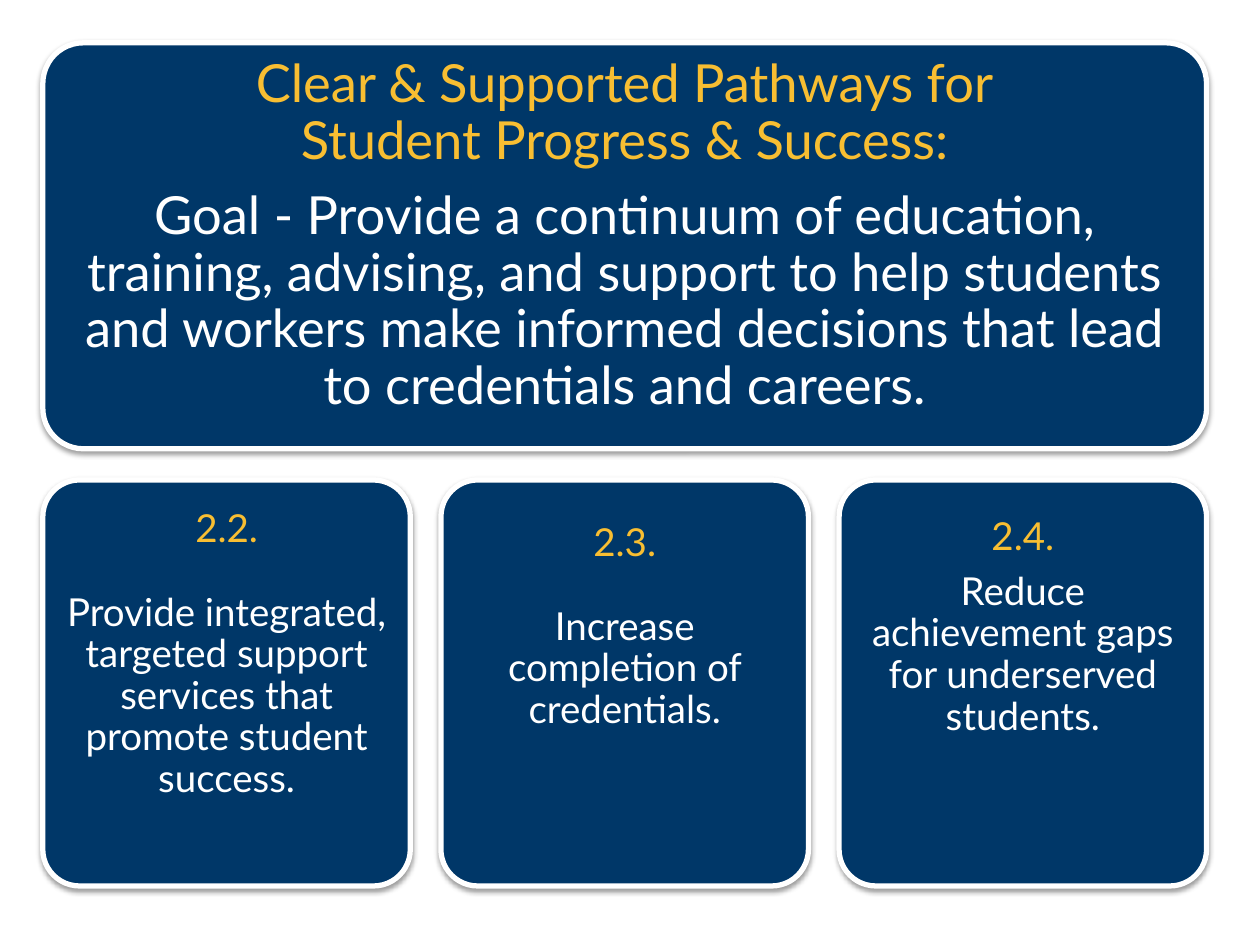
"""Build the pathways goal slide with a header panel above three objective cards."""
from lxml import etree
from pptx import Presentation
from pptx.dml.color import RGBColor
from pptx.enum import shapes, text
from pptx.oxml.ns import qn
from pptx.util import Pt

THEME = {
    "font": "Lato", "panel": "003768", "outline": "FFFFFF",
    "accent": "F8BE32", "body": "FFFFFF", "header_size": 30, "card_size": 22,
}
HEADER = (
    "Clear & Supported Pathways for\vStudent Progress & Success:",
    "Goal - Provide a continuum of education, training, advising, and support to help "
    "students and workers make informed decisions that lead to credentials and careers.",
)
CARDS = [
    {"number": "2.2.", "top_inset": 10.9, "gap": 23.8,
     "goal": "Provide integrated, targeted support services that promote student success."},
    {"number": "2.3.", "top_inset": 18.9, "gap": 23.8,
     "goal": "Increase completion of credentials."},
    {"number": "2.4.", "top_inset": 15.1, "gap": 7.7,
     "goal": "Reduce achievement gaps for underserved students."},
]
LEFT, TOP, WIDTH, HEIGHT = 24.5, 24.5, 665, 232
COLUMN_GAP, ROW_GAP = 17.5, 17.8
HEADER_PADDING, CARD_PADDING = 6.75, 6.1


def add_panel(slide, left, top, width, height):
    """Add a rounded panel with a white outline and a soft shadow."""
    panel = slide.shapes.add_shape(
        shapes.MSO_SHAPE.ROUNDED_RECTANGLE, Pt(left), Pt(top), Pt(width), Pt(height))
    panel.adjustments[0] = 0.1
    panel.fill.solid()
    panel.fill.fore_color.rgb = RGBColor.from_string(THEME["panel"])
    panel.line.color.rgb = RGBColor.from_string(THEME["outline"])
    panel.line.width = Pt(3)
    panel.shadow.inherit = False
    effects = panel._element.spPr.find(qn("a:effectLst"))
    shadow = etree.SubElement(effects, qn("a:outerShdw"), blurRad=str(Pt(3.1)),
                              dist=str(Pt(1.6)), dir="5400000", rotWithShape="0")
    color = etree.SubElement(shadow, qn("a:srgbClr"), val="000000")
    etree.SubElement(color, qn("a:alpha"), val="38000")


def place_text(shape, left, top, width, height, padding):
    """Position a text shape inside its panel and set its margins."""
    shape.left, shape.top = Pt(left + padding), Pt(top + padding)
    shape.width, shape.height = Pt(width - 2 * padding), Pt(height - 2 * padding)
    frame = shape.text_frame
    frame.word_wrap = True
    frame.auto_size = text.MSO_AUTO_SIZE.NONE
    frame.margin_left = frame.margin_right = Pt(padding)
    return frame


def write(paragraph, words, *, size, color, space_after):
    """Write centred text into a paragraph with the given format."""
    paragraph.text = words
    paragraph.alignment = text.PP_ALIGN.CENTER
    paragraph.line_spacing = 0.9
    paragraph.space_before = Pt(0)
    paragraph.space_after = Pt(space_after)
    for line_break in paragraph._p.findall(qn("a:br")):
        etree.SubElement(line_break, qn("a:rPr"), sz=str(size * 100))
    for run in paragraph.runs:
        run.font.name = THEME["font"]
        run.font.size = Pt(size)
        run.font.color.rgb = RGBColor.from_string(color)


def write_pair(frame, heading, body, *, size, gap):
    """Write an accent heading followed by its body text."""
    write(frame.paragraphs[0], heading, size=size, color=THEME["accent"], space_after=gap)
    write(frame.add_paragraph(), body, size=size, color=THEME["body"], space_after=0)


def add_header(slide):
    """Add the header panel with the slide title on it."""
    box = (LEFT, TOP, WIDTH, HEIGHT)
    add_panel(slide, *box)
    title = slide.shapes.title
    slide.shapes._spTree.append(title._element)
    frame = place_text(title, *box, HEADER_PADDING)
    frame.vertical_anchor = text.MSO_ANCHOR.MIDDLE
    frame.margin_top = Pt(0)
    frame.margin_bottom = Pt(10.5)
    write_pair(frame, *HEADER, size=THEME["header_size"], gap=10.5)


def add_cards(slide):
    """Add the row of equal cards below the header."""
    width = (WIDTH - COLUMN_GAP * (len(CARDS) - 1)) / len(CARDS)
    top = TOP + HEIGHT + ROW_GAP
    for column, card in enumerate(CARDS):
        box = (LEFT + column * (width + COLUMN_GAP), top, width, HEIGHT)
        add_panel(slide, *box)
        label = slide.shapes.add_textbox(0, 0, 0, 0)
        frame = place_text(label, *box, CARD_PADDING)
        frame.vertical_anchor = text.MSO_ANCHOR.TOP
        frame.margin_top = Pt(card["top_inset"])
        write_pair(frame, card["number"], card["goal"],
                   size=THEME["card_size"], gap=card["gap"])


def main():
    """Create and save the presentation."""
    presentation = Presentation()
    presentation.slide_width, presentation.slide_height = Pt(720), Pt(540)
    slide = presentation.slides.add_slide(presentation.slide_layouts[5])
    add_header(slide)
    add_cards(slide)
    presentation.save("out.pptx")


if __name__ == "__main__":
    main()
